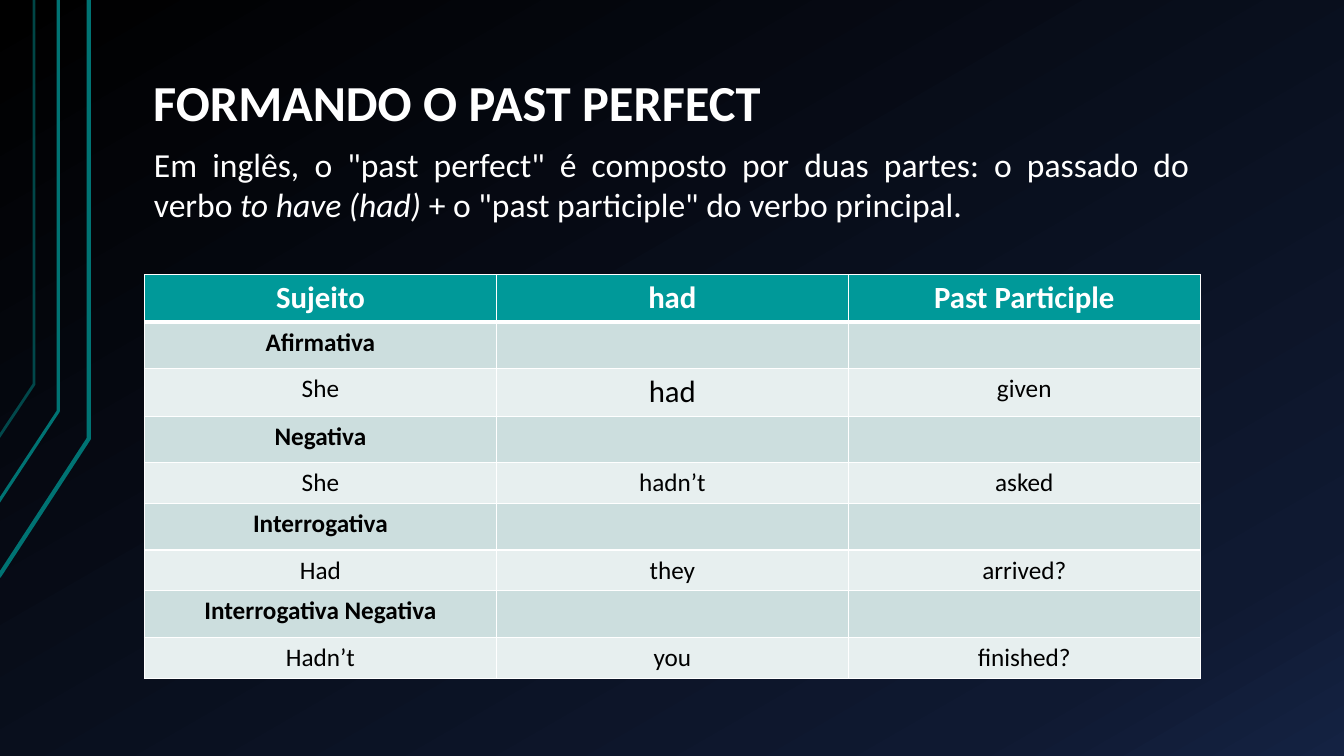
from copy import deepcopy

from lxml import etree
from pptx import Presentation
from pptx import util as u
from pptx.dml.color import RGBColor
from pptx.enum import text
from pptx.oxml import ns

FONT = "Calibri"
NO_BREAK_SPACE = chr(160)
COLORS = {
    "white": "FFFFFF", "black": "000000", "teal line": "007373",
    "header": "009999", "category": "CCDEDE", "example": "E7EFEF",
}
BACKGROUND_STOPS = [(0, "000000"), (0.85, "0F1931"), (1, "142242")]

# Corner points in cm, from the left edge up to the top, line width in points, opacity in percent
TEAL_LINES = [
    ([(-0.03, 14.53), (2.24, 11.05), (2.24, 0)], 3, 100),
    ([(-0.05, 12.67), (1.47, 10.36), (1.47, 0)], 2.25, 100),
    ([(-0.03, 11.02), (0.86, 9.68), (0.86, 0)], 2, 60),
]
HEADERS = ["Sujeito", "had", "Past Participle"]
FORMS = [
    ("Afirmativa", ["She", "had", "given"]),
    ("Negativa", ["She", "hadn’t", "asked"]),
    ("Interrogativa", ["Had", "they", "arrived?"]),
    ("Interrogativa Negativa", ["Hadn’t", "you", "finished?"]),
]
EXPLANATION = [
    ('Em inglês, o "past perfect" é composto por duas partes: o passado do verbo'
     + NO_BREAK_SPACE, False),
    ("to have (had)", True),
    (NO_BREAK_SPACE + '+ o "past participle" do verbo principal.', False),
]


def rgb(name):
    return RGBColor.from_string(COLORS[name])


def add_run(paragraph, words, size, color, bold=False, italic=False):
    run = paragraph.add_run()
    run.text = words
    run.font.name = FONT
    run.font.size = u.Pt(size)
    run.font.bold = bold
    run.font.italic = italic
    run.font.color.rgb = rgb(color)


def paint_background(slide):
    fill = slide.background.fill
    fill.gradient()
    fill.gradient_angle = 300
    stop_list = fill._fill._gradFill.gsLst
    stop_list.append(deepcopy(stop_list[0]))
    for stop, (position, color) in zip(fill.gradient_stops, BACKGROUND_STOPS):
        stop.position = position
        stop.color.rgb = RGBColor.from_string(color)


def add_teal_line(slide, points, width, opacity):
    start, *rest = [(u.Cm(x), u.Cm(y)) for x, y in points]
    builder = slide.shapes.build_freeform(*start)
    builder.add_line_segments(rest, close=False)
    teal_line = builder.convert_to_shape()
    teal_line.shadow.inherit = False
    teal_line.fill.background()
    teal_line.line.color.rgb = rgb("teal line")
    teal_line.line.width = u.Pt(width)
    if opacity < 100:
        color = teal_line.line._ln.find(".//" + ns.qn("a:srgbClr"))
        etree.SubElement(color, ns.qn("a:alpha"), val=str(opacity * 1000))


def set_title(slide, words):
    title = slide.shapes.title
    title.left, title.top = u.Cm(3.53), u.Cm(0.11)
    title.width, title.height = u.Cm(28.78), u.Cm(3.4)
    frame = title.text_frame
    frame.word_wrap = True
    frame.auto_size = text.MSO_AUTO_SIZE.NONE
    frame.vertical_anchor = text.MSO_ANCHOR.BOTTOM
    frame.margin_left = frame.margin_right = u.Cm(0.33)
    frame.margin_top = frame.margin_bottom = u.Cm(0.18)
    paragraph = frame.paragraphs[0]
    paragraph.alignment = text.PP_ALIGN.LEFT
    paragraph.line_spacing = 0.9
    add_run(paragraph, words, 36, "white", bold=True)


def add_explanation(slide):
    box = slide.shapes.add_textbox(u.Cm(3.63), u.Cm(3.5), u.Cm(26.6), u.Cm(3.5))
    box.text_frame.word_wrap = True
    paragraph = box.text_frame.paragraphs[0]
    paragraph.alignment = text.PP_ALIGN.JUSTIFY
    for words, italic in EXPLANATION:
        add_run(paragraph, words, 24, "white", italic=italic)


def set_borders(cell, top=1, bottom=1):
    properties = cell._tc.get_or_add_tcPr()
    widths = {"lnL": 1, "lnR": 1, "lnT": top, "lnB": bottom}
    for index, (side, width) in enumerate(widths.items()):
        line = etree.Element(ns.qn(f"a:{side}"), w=str(u.Pt(width)))
        solid = etree.SubElement(line, ns.qn("a:solidFill"))
        etree.SubElement(solid, ns.qn("a:srgbClr"), val=COLORS["white"])
        properties.insert(index, line)


def fill_row(row, words, fill, size=18, color="black", bold=False, top=1, bottom=1):
    for cell, word in zip(row.cells, words):
        cell.fill.solid()
        cell.fill.fore_color.rgb = rgb(fill)
        set_borders(cell, top, bottom)
        if word:
            paragraph = cell.text_frame.paragraphs[0]
            paragraph.alignment = text.PP_ALIGN.CENTER
            # The first "had" keeps the size of its heading
            add_run(paragraph, word, 22 if word == "had" else size, color, bold)


def add_forms_table(slide):
    row_count = 1 + 2 * len(FORMS)
    table = slide.shapes.add_table(
        row_count, len(HEADERS), u.Cm(3.64), u.Cm(6.92), u.Cm(26.6), u.Cm(10.05)).table
    for column in table.columns:
        column.width = u.Cm(8.87)
    rows = list(table.rows)
    for row in rows:
        row.height = u.Cm(1.17)
    for example_row in rows[4::2]:
        example_row.height = u.Cm(1.01)

    fill_row(rows[0], HEADERS, "header", 22, "white", bold=True, bottom=3)
    for index, (category, example) in enumerate(FORMS):
        fill_row(rows[1 + 2 * index], [category, "", ""], "category", bold=True,
                 top=1 if index else 3)
        fill_row(rows[2 + 2 * index], example, "example")


def main():
    deck = Presentation()
    deck.slide_width, deck.slide_height = u.Cm(33.87), u.Cm(19.05)
    slide = deck.slides.add_slide(deck.slide_layouts[5])

    # Backdrop
    paint_background(slide)
    for points, width, opacity in TEAL_LINES:
        add_teal_line(slide, points, width, opacity)

    # Content
    set_title(slide, "FORMANDO O PAST PERFECT")
    add_forms_table(slide)
    add_explanation(slide)
    deck.save("out.pptx")


if __name__ == "__main__":
    main()
